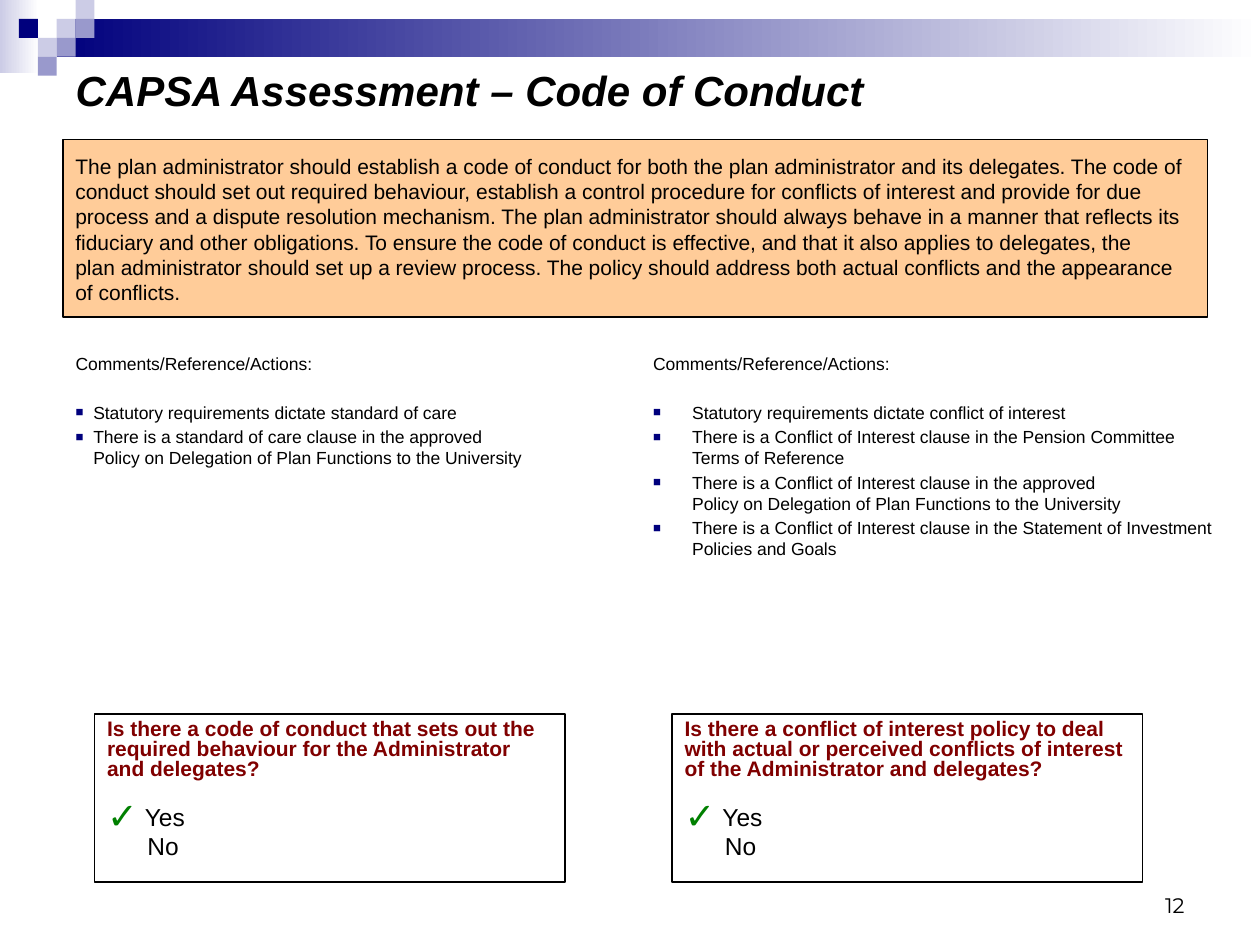
import pptx
import pptx.dml.color
import pptx.enum.shapes
import pptx.enum.text
import pptx.oxml
import pptx.oxml.ns
import pptx.util

COLORS = {"black": "000000", "navy": "00007D", "lilac": "CCCCE6", "violet": "9999CC",
          "white": "FFFFFF", "peach": "FFCC99", "maroon": "800000", "green": "008000"}
COLUMNS, ROWS = 120, 90
TILE = 1.8  # side of a header square, in grid units
BULLET_TAGS = ("a:buClr", "a:buSzPct", "a:buFont", "a:buChar", "a:buNone")
ALIGN = pptx.enum.text.PP_ALIGN
ANCHOR = pptx.enum.text.MSO_ANCHOR


def rgb(name):
    return pptx.dml.color.RGBColor.from_string(COLORS[name])


class Deck:
    """Style and current slide; boxes are (column, row, columns, rows) on the grid."""

    def __init__(self):
        self.prs = pptx.Presentation()
        self.prs.slide_width = pptx.util.Inches(10)
        self.prs.slide_height = pptx.util.Inches(7.5)
        self.slide = self.prs.slides.add_slide(self.prs.slide_layouts[4])
        self.font = "Arial"

    def area(self, box):
        unit_x, unit_y = self.prs.slide_width / COLUMNS, self.prs.slide_height / ROWS
        return [round(n * unit) for n, unit in zip(box, (unit_x, unit_y) * 2)]

    def rectangle(self, box, *fills, line=None):
        """One fill is solid, two make a left-to-right gradient."""
        shape = self.slide.shapes.add_shape(
            pptx.enum.shapes.MSO_SHAPE.RECTANGLE, *self.area(box))
        shape.shadow.inherit = False
        if len(fills) == 1:
            shape.fill.solid()
            shape.fill.fore_color.rgb = rgb(fills[0])
        else:
            shape.fill.gradient()
            shape.fill.gradient_angle = 0
            for stop, name in zip(shape.fill.gradient_stops, fills):
                stop.color.rgb = rgb(name)
        self.outline(shape, line)
        return shape

    def outline(self, shape, name):
        if name:
            shape.line.color.rgb = rgb(name)
            shape.line.width = pptx.util.Pt(0.75)
        else:
            shape.line.fill.background()

    def placeholder(self, index, box, anchor=ANCHOR.TOP):
        holder = self.slide.placeholders[index]
        holder.left, holder.top, holder.width, holder.height = self.area(box)
        return self.frame(holder, anchor)

    def frame(self, shape, anchor=ANCHOR.TOP):
        frame = shape.text_frame
        frame.word_wrap = True
        frame.auto_size = pptx.enum.text.MSO_AUTO_SIZE.NONE
        frame.vertical_anchor = anchor
        return frame

    def paragraph(self, frame, text, size, color="black", bold=False, italic=False,
                  font=None, align=ALIGN.LEFT, pitch=1.2, before=0, hang=0, bullet=None):
        """Bullet is (character, colour, percent); a list in text is broken into lines."""
        first = frame.paragraphs[0]
        paragraph = frame.add_paragraph() if first.runs else first
        paragraph.alignment = align
        paragraph.line_spacing = pptx.util.Pt(round(size * pitch, 1))
        paragraph.space_before = pptx.util.Pt(before)
        self.bullet(paragraph, hang, bullet)
        for number, line in enumerate([text] if isinstance(text, str) else text):
            if number:
                paragraph.add_line_break()
            run = paragraph.add_run()
            run.text = line
            run.font.name = font or self.font
            run.font.size = pptx.util.Pt(size)
            run.font.bold, run.font.italic = bold, italic
            run.font.color.rgb = rgb(color)

    def bullet(self, paragraph, hang, bullet):
        props = paragraph._p.get_or_add_pPr()
        margin = pptx.util.Inches(hang)
        props.set("marL", str(margin))
        props.set("indent", str(-margin if bullet else 0))
        if bullet:
            character, color, percent = bullet
            parts = [("a:buClr", {}), ("a:buSzPct", {"val": str(percent * 1000)}),
                     ("a:buFont", {"typeface": self.font}), ("a:buChar", {"char": character})]
        else:
            parts = [("a:buNone", {})]
        for tag, attributes in parts:
            element = pptx.oxml.parse_xml(f"<{tag} {pptx.oxml.ns.nsdecls('a')}/>")
            for key, value in attributes.items():
                element.set(key, value)
            if tag == "a:buClr":
                element.append(pptx.oxml.parse_xml(
                    f'<a:srgbClr {pptx.oxml.ns.nsdecls("a")} val="{COLORS[color]}"/>'))
            props.append(element)

    def header(self):
        self.rectangle((0, 0, 3.7, 7), "lilac", "white")
        self.rectangle((3 * TILE, TILE, COLUMNS - 3 * TILE, 2 * TILE), "navy", "white")
        for column, row, color in [(3, 1, "lilac"), (4, 0, "lilac"), (4, 1, "violet"),
                                   (2, 2, "lilac"), (1, 1, "navy"), (3, 2, "violet"),
                                   (2, 3, "violet")]:
            self.rectangle((column * TILE, row * TILE, TILE, TILE), color)

    def title(self, text):
        frame = self.placeholder(0, (6, 6, 108, 5), ANCHOR.MIDDLE)
        self.paragraph(frame, text, 24, bold=True, italic=True)

    def policy(self, paragraphs):
        frame = self.frame(self.rectangle((6, 13.3, 109, 16.9), "peach", line="black"))
        frame.margin_top = pptx.util.Inches(0.11)
        for text in paragraphs:
            self.paragraph(frame, text, 12)

    def comments(self, index, column, width, hang, items):
        frame = self.placeholder(index, (column, 33, width, 31))
        self.paragraph(frame, "Comments/Reference/Actions:", 10)
        for number, item in enumerate(items):
            self.paragraph(frame, item, 10, before=2 if number else 16, hang=hang,
                           bullet=("■", "navy", 75))

    def question(self, index, column, text):
        frame = self.placeholder(index, (column, 68, 44.8, 16))
        self.outline(self.slide.placeholders[index], "black")
        self.paragraph(frame, text, 12, "maroon", bold=True, pitch=0.96)
        self.paragraph(frame, "Yes", 14, pitch=1, before=15, hang=0.3,
                       bullet=("✓", "green", 150))
        self.paragraph(frame, "No", 14, pitch=1, before=2.6, hang=0.32)

    def page_number(self, text):
        box = self.slide.shapes.add_textbox(*self.area((86, 82, 28, 6)))
        self.paragraph(self.frame(box, ANCHOR.BOTTOM), text, 12,
                       font="Montserrat", align=ALIGN.RIGHT)


def main():
    deck = Deck()
    deck.header()
    deck.title("CAPSA Assessment – Code of Conduct")
    deck.policy([
        "The plan administrator should establish a code of conduct for both the plan "
        "administrator and its delegates. The code of conduct should set out required "
        "behaviour, establish a control procedure for conflicts of interest and provide for due",
        "process and a dispute resolution mechanism. The plan administrator should always "
        "behave in a manner that reflects its fiduciary and other obligations. To ensure the "
        "code of conduct is effective, and that it also applies to delegates, the",
        "plan administrator should set up a review process. The policy should address both "
        "actual conflicts and the appearance of conflicts.",
    ])
    delegation = "Policy on Delegation of Plan Functions to the University"
    conflict = "There is a Conflict of Interest clause in the "
    deck.comments(2, 6, 54, 0.14, [
        "Statutory requirements dictate standard of care",
        ["There is a standard of care clause in the approved", delegation],
    ])
    deck.comments(4, 61, 56, 0.31, [
        "Statutory requirements dictate conflict of interest",
        [conflict + "Pension Committee", "Terms of Reference"],
        [conflict + "approved", delegation],
        [conflict + "Statement of Investment", "Policies and Goals"],
    ])
    deck.question(1, 9, "Is there a code of conduct that sets out the required behaviour "
                        "for the Administrator and delegates?")
    deck.question(3, 64, "Is there a conflict of interest policy to deal with actual or "
                         "perceived conflicts of interest of the Administrator and delegates?")
    deck.page_number("12")
    deck.prs.save("out.pptx")


if __name__ == "__main__":
    main()
